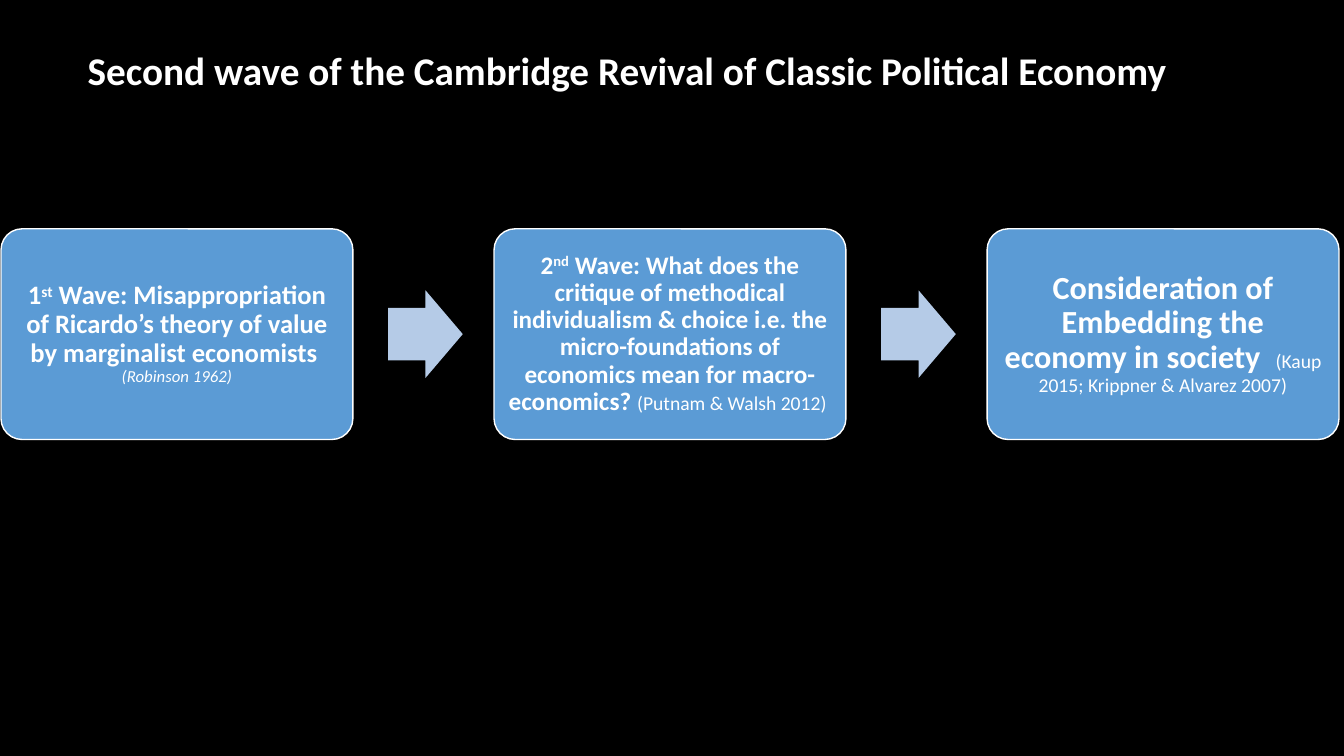
from dataclasses import dataclass

from pptx import Presentation
from pptx.dml.color import RGBColor
from pptx.enum.shapes import MSO_SHAPE
from pptx.enum.text import MSO_ANCHOR, PP_ALIGN
from pptx.util import Inches, Pt

ROUND_RECT = MSO_SHAPE.ROUNDED_RECTANGLE
RIGHT_ARROW = MSO_SHAPE.RIGHT_ARROW
MIDDLE = MSO_ANCHOR.MIDDLE
LEFT, CENTER = PP_ALIGN.LEFT, PP_ALIGN.CENTER

BLACK = RGBColor(0x00, 0x00, 0x00)
WHITE = RGBColor(0xFF, 0xFF, 0xFF)
BLUE = RGBColor(0x5B, 0x9B, 0xD5)
PALE_BLUE = RGBColor(0xB5, 0xCB, 0xE7)
FONT = "Calibri"

# Flow geometry, in inches
BOX_LEFT, BOX_TOP, BOX_W, BOX_H = 0.01, 2.27, 3.49, 2.09
ARROW_W, ARROW_H = 0.74, 0.87
PITCH = 4.89
ARROW_OFFSET = 3.84


@dataclass
class Run:
    text: str
    size: int
    bold: bool = True
    italic: bool = False
    superscript: bool = False


@dataclass
class Step:
    margin: float
    runs: list[Run]


TITLE = Run("Second wave of the Cambridge Revival of Classic Political Economy", 28)
STEPS = [
    Step(0.08, [
        Run("1", 19),
        Run("st", 19, superscript=True),
        Run(" Wave: Misappropriation of Ricardo’s theory of value "
            "by marginalist economists  ", 19),
        Run("(Robinson 1962)", 12, bold=False, italic=True),
    ]),
    Step(0.07, [
        Run("2", 18),
        Run("nd", 18, superscript=True),
        Run(" Wave: What does the critique of methodical individualism & choice "
            "i.e. the micro-foundations of economics mean for macro-economics? ", 18),
        Run("(Putnam & Walsh 2012) ", 14, bold=False),
    ]),
    Step(0.1, [
        Run("Consideration of Embedding the economy in society  ", 23),
        Run("(Kaup 2015; Krippner & Alvarez 2007)", 14, bold=False),
    ]),
]


def write(tf, runs: list[Run], align) -> None:
    tf.word_wrap = True
    tf.vertical_anchor = MIDDLE
    p = tf.paragraphs[0]
    p.alignment = align
    p.line_spacing = 0.9
    for run in runs:
        r = p.add_run()
        r.text = run.text
        r.font.name = FONT
        r.font.size = Pt(run.size)
        r.font.bold = run.bold
        r.font.italic = run.italic
        r.font.color.rgb = WHITE
        if run.superscript:
            r._r.get_or_add_rPr().set("baseline", "30000")


def add_box(slide, left: float, step: Step) -> None:
    sp = slide.shapes.add_shape(ROUND_RECT, Inches(left), Inches(BOX_TOP),
                                Inches(BOX_W), Inches(BOX_H))
    sp.adjustments[0] = 0.1
    sp.shadow.inherit = False
    sp.fill.solid()
    sp.fill.fore_color.rgb = BLUE
    sp.line.color.rgb = WHITE
    sp.line.width = Pt(1)
    tf = sp.text_frame
    tf.margin_left = tf.margin_right = Inches(step.margin)
    tf.margin_top = tf.margin_bottom = Inches(step.margin)
    write(tf, step.runs, CENTER)


def add_arrow(slide, left: float) -> None:
    top = BOX_TOP + (BOX_H - ARROW_H) / 2
    sp = slide.shapes.add_shape(RIGHT_ARROW, Inches(left), Inches(top),
                                Inches(ARROW_W), Inches(ARROW_H))
    sp.adjustments[0] = 0.6
    sp.adjustments[1] = 0.5
    sp.shadow.inherit = False
    sp.fill.solid()
    sp.fill.fore_color.rgb = PALE_BLUE
    sp.line.fill.background()


def main() -> None:
    prs = Presentation()
    prs.slide_width, prs.slide_height = Inches(13.33), Inches(7.5)
    slide = prs.slides.add_slide(prs.slide_layouts[5])
    slide.background.fill.solid()
    slide.background.fill.fore_color.rgb = BLACK

    # Title
    title = slide.shapes.title
    title.left, title.top = Inches(0.77), Inches(0)
    title.width, title.height = Inches(11.5), Inches(1.45)
    write(title.text_frame, [TITLE], LEFT)

    # Steps, with an arrow between neighbours
    for i, step in enumerate(STEPS):
        left = BOX_LEFT + i * PITCH
        add_box(slide, left, step)
        if i < len(STEPS) - 1:
            add_arrow(slide, left + ARROW_OFFSET)

    prs.save("out.pptx")


if __name__ == "__main__":
    main()
